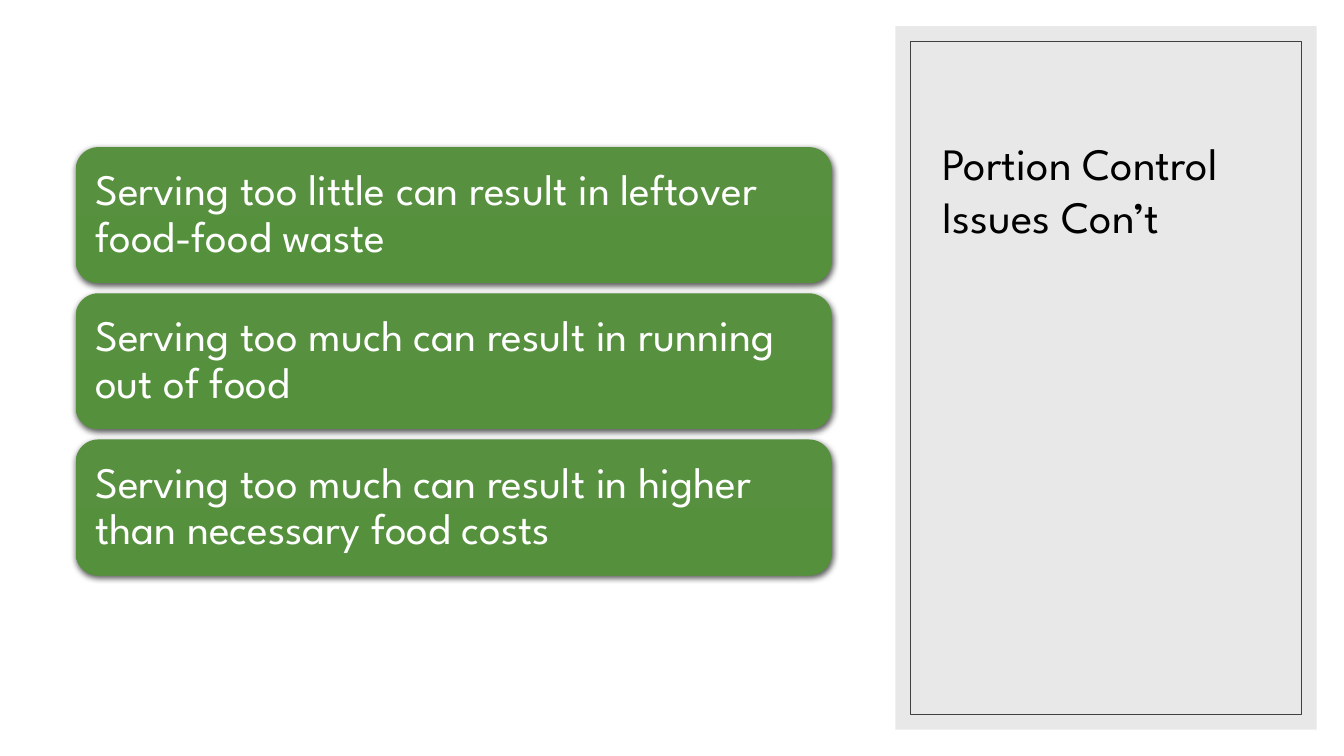
from dataclasses import dataclass

from lxml import etree
from pptx import Presentation
from pptx import util as u
from pptx.dml.color import RGBColor
from pptx.enum import shapes, text
from pptx.oxml import ns


@dataclass(frozen=True)
class Theme:
    font: str = "League Spartan"
    title_size: float = 32
    card_size: float = 31
    title_color: str = "000000"
    card_text: str = "FFFFFF"
    card_top: str = "57903F"
    card_bottom: str = "55913C"
    panel: str = "D9D9D9"
    panel_opacity: int = 60
    frame: str = "404040"
    shadow: str = "000000"
    shadow_opacity: int = 63


THEME = Theme()
TITLE = "Portion Control Issues Con’t"
ISSUES = [
    "Serving too little can result in leftover food-food waste",
    "Serving too much can result in running out of food",
    "Serving too much can result in higher than necessary food costs",
]


def add_box(slide, kind, left, top, width, height):
    box = slide.shapes.add_shape(
        kind, u.Inches(left), u.Inches(top), u.Inches(width), u.Inches(height))
    box.shadow.inherit = False
    return box


def set_opacity(color, percent):
    etree.SubElement(color, ns.qn("a:alpha"), val=str(percent * 1000))


def add_soft_shadow(box):
    effects = box._element.spPr.find(ns.qn("a:effectLst"))
    shadow = etree.SubElement(
        effects, ns.qn("a:outerShdw"), blurRad=str(u.Pt(4.5)),
        dist=str(u.Pt(1.5)), dir="5400000", algn="ctr", rotWithShape="0")
    color = etree.SubElement(shadow, ns.qn("a:srgbClr"), val=THEME.shadow)
    set_opacity(color, THEME.shadow_opacity)


def write(frame, wording, size, color):
    frame.word_wrap = True
    paragraph = frame.paragraphs[0]
    paragraph.alignment = text.PP_ALIGN.LEFT
    run = paragraph.add_run()
    run.text = wording
    run.font.name = THEME.font
    run.font.size = u.Pt(size)
    run.font.color.rgb = RGBColor.from_string(color)
    return paragraph


def add_title_panel(slide, left, top, width, height, title):
    # Translucent panel
    panel = add_box(slide, shapes.MSO_SHAPE.RECTANGLE, left, top, width, height)
    panel.fill.solid()
    panel.fill.fore_color.rgb = RGBColor.from_string(THEME.panel)
    panel.line.fill.background()
    set_opacity(panel._element.spPr.find(".//" + ns.qn("a:srgbClr")),
                THEME.panel_opacity)

    # Thin inner frame
    gap = 0.15
    frame = add_box(slide, shapes.MSO_SHAPE.RECTANGLE, left + gap, top + gap,
                    width - 2 * gap, height - 2 * gap)
    frame.fill.background()
    frame.line.color.rgb = RGBColor.from_string(THEME.frame)
    frame.line.width = u.Pt(0.5)

    # Title
    heading = slide.shapes.add_textbox(
        u.Inches(left + 0.37), u.Inches(top + 0.4),
        u.Inches(width - 0.72), u.Inches(1.8)).text_frame
    heading.vertical_anchor = text.MSO_ANCHOR.BOTTOM
    write(heading, title, THEME.title_size, THEME.title_color)


def add_issue_cards(slide, left, top, width, height, issues, gap=0.1):
    card_height = (height - gap * (len(issues) - 1)) / len(issues)
    for index, issue in enumerate(issues):
        card = add_box(slide, shapes.MSO_SHAPE.ROUNDED_RECTANGLE, left,
                       top + index * (card_height + gap), width, card_height)
        card.fill.gradient()
        card.fill.gradient_angle = 270
        for stop, color in zip(card.fill.gradient_stops,
                               (THEME.card_top, THEME.card_bottom)):
            stop.color.rgb = RGBColor.from_string(color)
        card.line.fill.background()
        add_soft_shadow(card)

        # Card text
        frame = card.text_frame
        frame.margin_left = frame.margin_right = u.Inches(0.13)
        frame.margin_top = frame.margin_bottom = u.Inches(0.13)
        frame.vertical_anchor = text.MSO_ANCHOR.MIDDLE
        paragraph = write(frame, issue, THEME.card_size, THEME.card_text)
        paragraph.line_spacing = 0.9


def main():
    deck = Presentation()
    deck.slide_width = u.Inches(13.33)
    deck.slide_height = u.Inches(7.5)
    slide = deck.slides.add_slide(deck.slide_layouts[6])
    add_title_panel(slide, 8.88, 0.26, 4.18, 6.98, TITLE)
    add_issue_cards(slide, 0.75, 1.46, 7.5, 4.25, ISSUES)
    deck.save("out.pptx")


if __name__ == "__main__":
    main()
